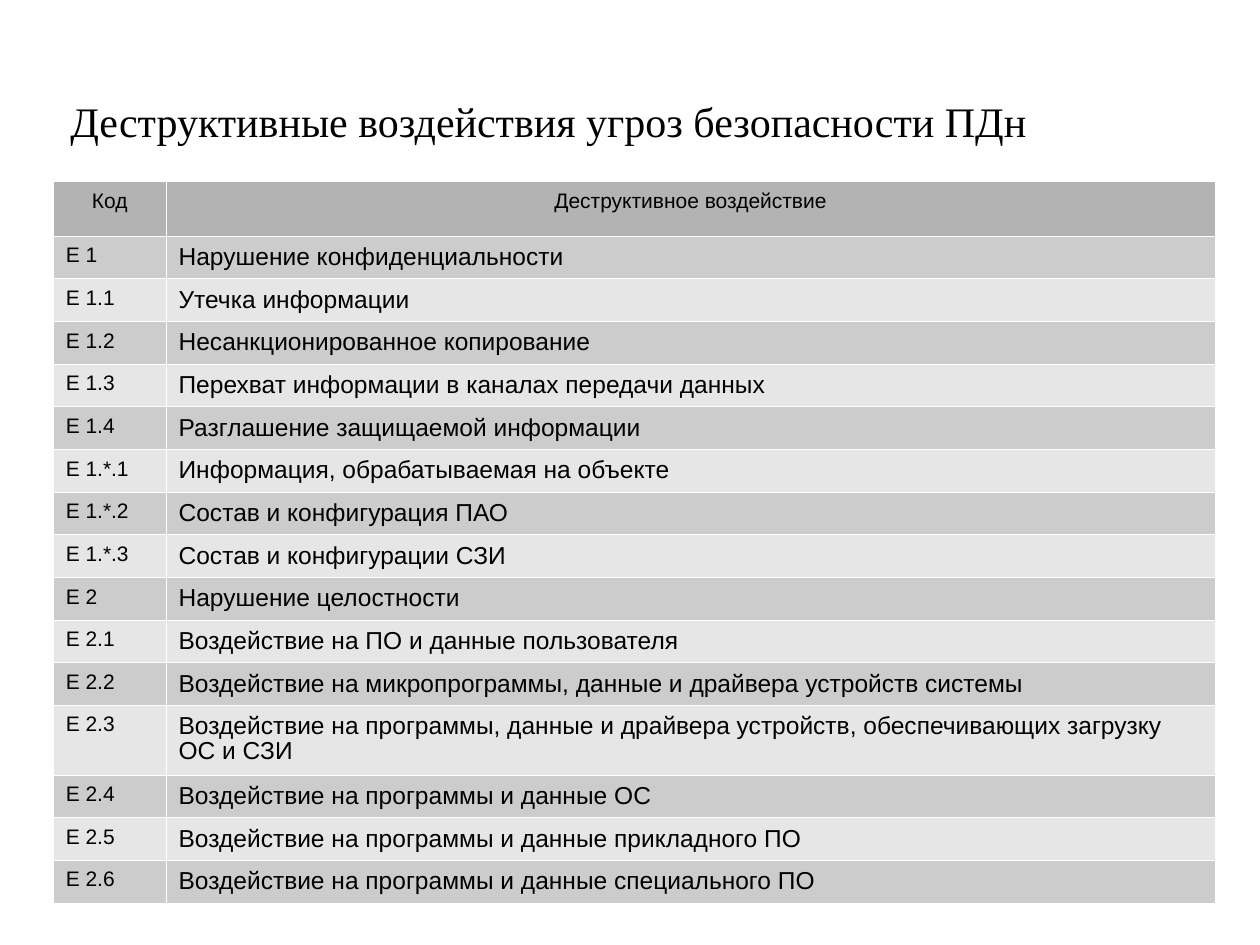
from lxml import etree
from pptx import Presentation
from pptx.dml.color import RGBColor
from pptx.enum import text
from pptx.oxml import ns
from pptx.util import Pt

COLOURS = {
    "text": "000000",
    "border": "FFFFFF",
    "header": "B3B3B3",
    "dark": "CCCCCC",
    "light": "E6E6E6",
}
HEADER = ("Код", "Деструктивное воздействие")
IMPACTS = [
    ("Е 1", "Нарушение конфиденциальности"),
    ("Е 1.1", "Утечка информации"),
    ("Е 1.2", "Несанкционированное копирование"),
    ("Е 1.3", "Перехват информации в каналах передачи данных"),
    ("Е 1.4", "Разглашение защищаемой информации"),
    ("Е 1.*.1", "Информация, обрабатываемая на объекте"),
    ("Е 1.*.2", "Состав и конфигурация ПАО"),
    ("Е 1.*.3", "Состав и конфигурации СЗИ"),
    ("Е 2", "Нарушение целостности"),
    ("Е 2.1", "Воздействие на ПО и данные пользователя"),
    ("Е 2.2", "Воздействие на микропрограммы, данные и драйвера устройств системы"),
    ("Е 2.3", "Воздействие на программы, данные и драйвера устройств, "
              "обеспечивающих загрузку ОС и СЗИ"),
    ("Е 2.4", "Воздействие на программы и данные ОС"),
    ("Е 2.5", "Воздействие на программы и данные прикладного ПО"),
    ("Е 2.6", "Воздействие на программы и данные специального ПО"),
]
HEADER_HEIGHT, ROW_HEIGHT, TALL_HEIGHT = 31.1, 24.1, 39.8
TALL_CODE = "Е 2.3"
CODE_WIDTH = 64.5


def write(frame, words, size, font="Arial", align=text.PP_ALIGN.LEFT, spacing=None):
    """Put one formatted paragraph into a text frame."""
    frame.word_wrap = True
    para = frame.paragraphs[0]
    para.alignment = align
    para.line_spacing = spacing
    span = para.add_run()
    span.text = words
    span.font.size = Pt(size)
    span.font.name = font
    span.font.color.rgb = RGBColor.from_string(COLOURS["text"])


def style_cell(cell, fill):
    """Give a cell its margins, hairline borders and fill."""
    cell.margin_left = cell.margin_right = Pt(7.1)
    cell.margin_top, cell.margin_bottom = Pt(5.8), Pt(3.6)
    cell.vertical_anchor = text.MSO_ANCHOR.TOP
    properties = cell._tc.get_or_add_tcPr()
    for side in ("lnL", "lnR", "lnT", "lnB"):
        line = etree.SubElement(properties, ns.qn(f"a:{side}"), w=str(Pt(0.06)))
        solid = etree.SubElement(line, ns.qn("a:solidFill"))
        etree.SubElement(solid, ns.qn("a:srgbClr"), val=COLOURS["border"])
    cell.fill.solid()
    cell.fill.fore_color.rgb = RGBColor.from_string(COLOURS[fill])


def add_title(page, left, top, width, height):
    box = page.shapes.add_textbox(Pt(left), Pt(top), Pt(width), Pt(height))
    box.text_frame.vertical_anchor = text.MSO_ANCHOR.TOP
    write(box.text_frame, "Деструктивные воздействия угроз безопасности ПДн", 24,
          font="Times New Roman")


def add_impact_table(page, left, top, width):
    rows = [HEADER] + IMPACTS
    heights = [HEADER_HEIGHT] + [
        TALL_HEIGHT if code == TALL_CODE else ROW_HEIGHT for code, _ in IMPACTS]
    table = page.shapes.add_table(len(rows), 2, Pt(left), Pt(top), Pt(width),
                                  Pt(sum(heights))).table
    table.horz_banding = False
    table.first_row = False
    table.columns[0].width = Pt(CODE_WIDTH)
    table.columns[1].width = Pt(width - CODE_WIDTH)

    for index, (row, height) in enumerate(zip(rows, heights)):
        table.rows[index].height = Pt(height)
        is_header = index == 0
        fill = "header" if is_header else "dark" if index % 2 else "light"
        align = text.PP_ALIGN.CENTER if is_header else text.PP_ALIGN.LEFT
        for column, words in enumerate(row):
            cell = table.cell(index, column)
            style_cell(cell, fill)
            size = 12 if is_header or column == 0 else 14
            write(cell.text_frame, words, size, align=align, spacing=0.89)


def main():
    deck = Presentation()
    deck.slide_width, deck.slide_height = Pt(720), Pt(540)
    page = deck.slides.add_slide(deck.slide_layouts[6])
    add_title(page, 33.1, 51.1, 641.5, 51.1)
    add_impact_table(page, 30.5, 103.7, 663.8)
    deck.save("out.pptx")


if __name__ == "__main__":
    main()
